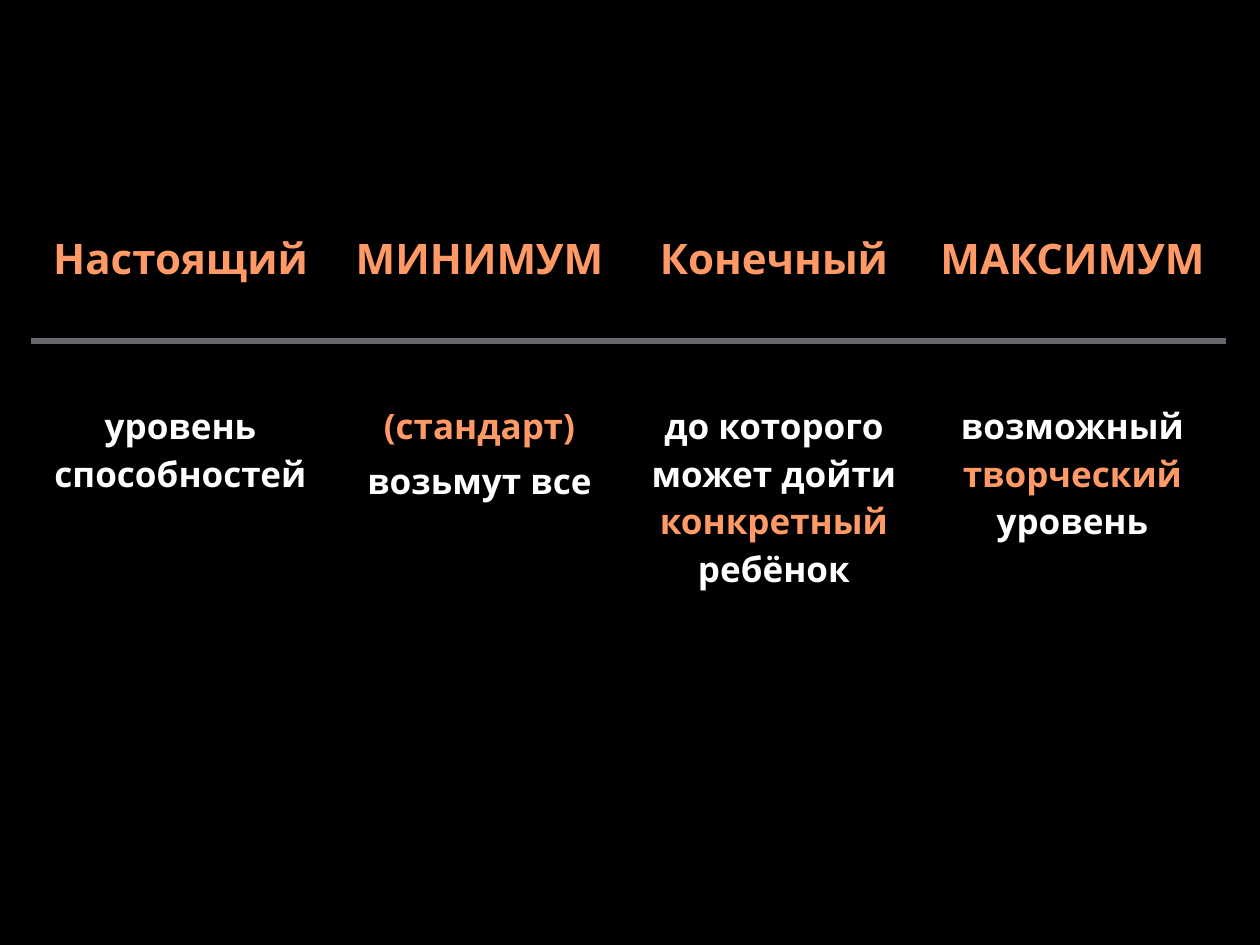
from dataclasses import dataclass

from lxml.etree import SubElement
from pptx import Presentation
from pptx.dml.color import RGBColor as Rgb
from pptx.enum.text import PP_ALIGN as Align
from pptx.oxml import parse_xml
from pptx.oxml.ns import nsdecls, qn
from pptx.util import Emu, Pt


@dataclass(frozen=True)
class Theme:
    font: str = "Open Sans"
    back: str = "000000"
    plain: str = "FFFFFF"
    accent: str = "FF9966"
    rule: str = "69676D"
    head: int = 24
    body: int = 20
    gap: int = 4
    line: float = 4.5


THEME = Theme()
HOT, WHITE = THEME.accent, THEME.plain
NO_STYLE = "{2D5ABB26-0587-4C30-8999-92F81FD0307C}"
WIDTHS = (299, 299, 290, 307)
HEIGHTS = (117, 529)
HEAD_TOP, BODY_TOP = 6, 61

# Each column: heading, then paragraphs made of (text, colour) runs.
LEVELS = (
    ("Настоящий", [[("уровень способностей", WHITE)]]),
    ("МИНИМУМ", [[("(стандарт)", HOT)], [("возьмут все", WHITE)]]),
    ("Конечный", [[("до которого может дойти ", WHITE),
                   ("конкретный ", HOT), ("ребёнок", WHITE)]]),
    ("МАКСИМУМ", [[("возможный ", WHITE), ("творческий ", HOT),
                   ("уровень", WHITE)]]),
)


def px(count):
    return Emu(round(count * 914400 / 126))


def write(cell, paras, size, top):
    cell.fill.background()
    cell.margin_top = px(top)
    frame = cell.text_frame
    for num, runs in enumerate(paras):
        para = frame.add_paragraph() if num else frame.paragraphs[0]
        para.alignment = Align.CENTER
        if num:
            para.space_before = Pt(THEME.gap)
        for text, color in runs:
            run = para.add_run()
            run.text = text
            font = run.font
            font.name, font.size, font.bold = THEME.font, Pt(size), True
            font.color.rgb = Rgb.from_string(color)


def edge(cell, side):
    """Draw the rule on one side of a cell: 'T' or 'B'."""
    line = parse_xml(f'<a:ln{side} {nsdecls("a")} w="{Pt(THEME.line)}"/>')
    fill = SubElement(line, qn("a:solidFill"))
    SubElement(fill, qn("a:srgbClr"), val=THEME.rule)
    cell._tc.get_or_add_tcPr().insert(0, line)


def add_levels(slide, left, top):
    frame = slide.shapes.add_table(
        len(HEIGHTS), len(WIDTHS), px(left), px(top),
        px(sum(WIDTHS)), px(sum(HEIGHTS)))
    table = frame.table
    table.horz_banding = False
    table._tbl.tblPr.find(qn("a:tableStyleId")).text = NO_STYLE
    for row, high in zip(table.rows, HEIGHTS):
        row.height = px(high)
    for col, (wide, (head, body)) in enumerate(zip(WIDTHS, LEVELS)):
        table.columns[col].width = px(wide)
        upper, lower = table.cell(0, col), table.cell(1, col)
        write(upper, [[(head, HOT)]], THEME.head, HEAD_TOP)
        write(lower, body, THEME.body, BODY_TOP)
        edge(upper, "B")
        edge(lower, "T")


def main():
    deck = Presentation()
    deck.slide_width, deck.slide_height = px(1260), px(945)
    slide = deck.slides.add_slide(deck.slide_layouts[6])
    fill = slide.background.fill
    fill.solid()
    fill.fore_color.rgb = Rgb.from_string(THEME.back)
    add_levels(slide, 31, 224)
    deck.save("out.pptx")


if __name__ == "__main__":
    main()
